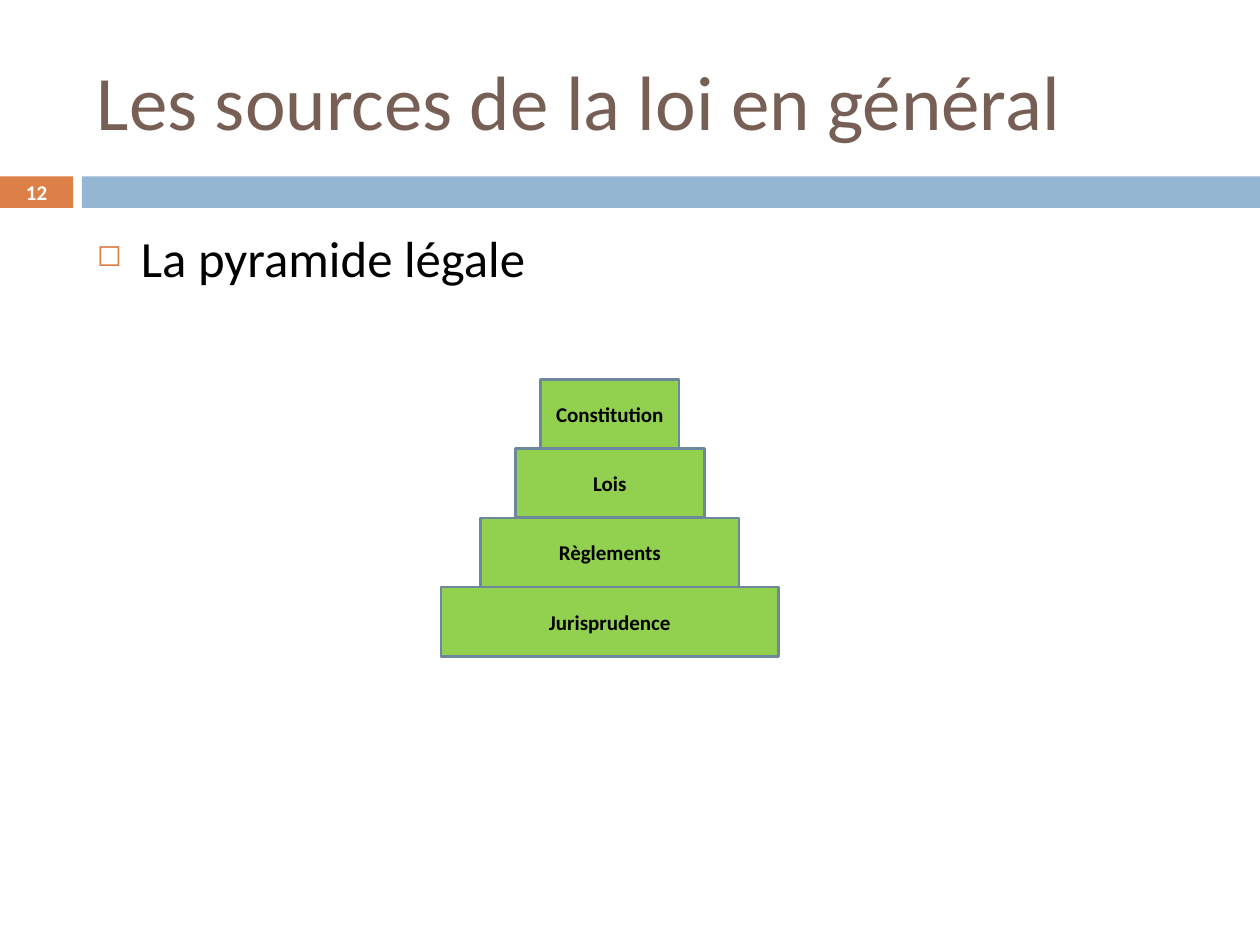
from dataclasses import dataclass

from lxml import etree
from pptx import Presentation
from pptx import util as u
from pptx.dml.color import RGBColor
from pptx.enum import shapes, text
from pptx.oxml import ns


@dataclass(frozen=True)
class Theme:
    font: str = "Calibri"
    brown: str = "775F55"
    orange: str = "DD8047"
    blue: str = "94B6D2"
    green: str = "92D050"
    edge: str = "6D879B"
    black: str = "000000"
    white: str = "FFFFFF"
    title: float = 44
    body: float = 29
    label: float = 12


THEME = Theme()


def write(shape, words, size, color, bold=False, align=text.PP_ALIGN.LEFT,
          anchor=text.MSO_ANCHOR.MIDDLE, pad=0.1):
    frame = shape.text_frame
    frame.word_wrap = True
    frame.vertical_anchor = anchor
    frame.margin_left = frame.margin_right = u.Inches(pad)
    para = frame.paragraphs[0]
    para.alignment = align
    run = para.add_run()
    run.text = words
    run.font.name = THEME.font
    run.font.size = u.Pt(size)
    run.font.bold = bold
    run.font.color.rgb = RGBColor.from_string(color)
    return para


def add_text(slide, box, words, **style):
    return write(slide.shapes.add_textbox(*map(u.Inches, box)), words, **style)


def add_rect(slide, box, fill, edge=None):
    rect = slide.shapes.add_shape(shapes.MSO_SHAPE.RECTANGLE, *map(u.Inches, box))
    rect.shadow.inherit = False
    rect.fill.solid()
    rect.fill.fore_color.rgb = RGBColor.from_string(fill)
    if edge:
        rect.line.color.rgb = RGBColor.from_string(edge)
        rect.line.width = u.Pt(1.5)
    else:
        rect.line.fill.background()
    return rect


def add_bullet(para, mark, color, scale, indent):
    props = para._p.get_or_add_pPr()
    props.set("marL", str(u.Inches(indent)))
    props.set("indent", str(-u.Inches(indent)))
    tint = etree.SubElement(props, ns.qn("a:buClr"))
    etree.SubElement(tint, ns.qn("a:srgbClr"), val=color)
    etree.SubElement(props, ns.qn("a:buSzPct"), val=str(scale * 1000))
    etree.SubElement(props, ns.qn("a:buChar"), char=mark)


def add_band(slide, box, number):
    left, top, width, height = box
    tab, gap = 0.58, 0.07
    page = add_rect(slide, (left, top, tab, height), THEME.orange)
    write(page, number, size=THEME.label, color=THEME.white, bold=True,
          align=text.PP_ALIGN.CENTER, pad=0)
    start = left + tab + gap
    add_rect(slide, (start, top, width - tab - gap, height), THEME.blue)


def add_body(slide, box, words):
    para = add_text(slide, box, words, size=THEME.body, color=THEME.black,
                    anchor=text.MSO_ANCHOR.TOP)
    para.space_before = u.Pt(7)
    add_bullet(para, "◻", THEME.orange, 60, 0.35)


def add_pyramid(slide, box, tiers):
    left, top, width, height = box
    step = height / len(tiers)
    for row, (words, span) in enumerate(tiers):
        place = (left + (width - span) / 2, top + row * step, span, step)
        tier = add_rect(slide, place, THEME.green, THEME.edge)
        write(tier, words, size=THEME.label, color=THEME.black, bold=True,
              align=text.PP_ALIGN.CENTER)


def main():
    deck = Presentation()
    deck.slide_width, deck.slide_height = u.Inches(10), u.Inches(7.5)
    slide = deck.slides.add_slide(deck.slide_layouts[6])
    add_band(slide, (0, 1.4, 10, 0.25), "12")
    add_text(slide, (0.67, 0.25, 8.92, 1.08), "Les sources de la loi en général",
             size=THEME.title, color=THEME.brown)
    add_body(slide, (0.67, 1.75, 8.92, 4.92), "La pyramide légale")
    tiers = [("Constitution", 1.1), ("Lois", 1.5),
             ("Règlements", 2.05), ("Jurisprudence", 2.68)]
    add_pyramid(slide, (3.5, 3.01, 2.68, 2.2), tiers)
    deck.save("out.pptx")


if __name__ == "__main__":
    main()
